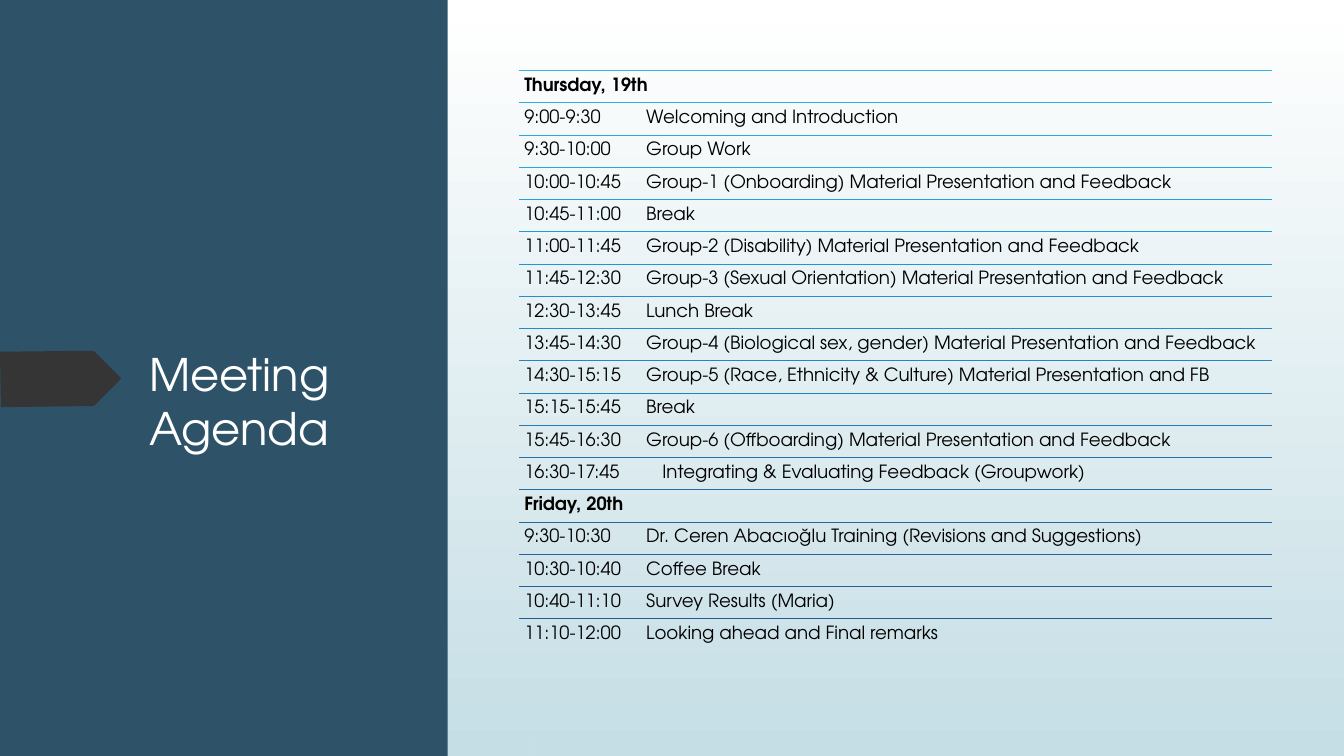
import dataclasses

import pptx
import pptx.dml.color
import pptx.enum.shapes
import pptx.enum.text
import pptx.oxml.ns
import pptx.util
from lxml import etree
from pptx.util import Inches


@dataclasses.dataclass(frozen=True)
class Theme:
    font: str = "TeX Gyre Adventor"
    title_size: int = 32
    agenda_size: int = 13
    panel: str = "2E5369"
    arrow: str = "353535"
    title: str = "FFFFFF"
    text: str = "000000"
    gradient: tuple = ("FFFFFF", "C5DEE5")
    # Rule colours at given row numbers, blended in between
    rules: tuple = ((0, "31B4E6"), (4, "239FDE"), (17, "265991"))


THEME = Theme()
rgb = pptx.dml.color.RGBColor.from_string


def fill_gradient(fill):
    fill.gradient()
    fill.gradient_angle = 270
    for stop, color in zip(fill.gradient_stops, THEME.gradient):
        stop.color.rgb = rgb(color)


def format_paragraph(paragraph, size, color, bold=False):
    for run in paragraph.runs:
        run.font.name = THEME.font
        run.font.size = pptx.util.Pt(size)
        run.font.color.rgb = rgb(color)
        run.font.bold = bold


presentation = pptx.Presentation()
presentation.slide_width = Inches(13.33)
presentation.slide_height = Inches(7.5)
slide = presentation.slides.add_slide(presentation.slide_layouts[5])
fill_gradient(slide.background.fill)

# Side panel and gradient field, placed behind the title
title = slide.shapes.title
rectangle = pptx.enum.shapes.MSO_SHAPE.RECTANGLE
panel = slide.shapes.add_shape(rectangle, 0, 0, Inches(4.44), Inches(7.5))
panel.fill.solid()
panel.fill.fore_color.rgb = rgb(THEME.panel)
field = slide.shapes.add_shape(rectangle, Inches(5.24), 0, Inches(8.09), Inches(7.5))
fill_gradient(field.fill)

# Arrow marker beside the title
builder = slide.shapes.build_freeform(0, Inches(3.49), scale=1.0)
arrow_points = [(0.92, 3.48), (0.94, 3.49), (1.19, 3.74), (1.2, 3.75), (1.19, 3.77),
                (0.94, 4.02), (0.92, 4.03), (0.82, 4.03), (0.01, 4.04)]
builder.add_line_segments([(Inches(x), Inches(y)) for x, y in arrow_points], close=True)
arrow = builder.convert_to_shape()
arrow.fill.solid()
arrow.fill.fore_color.rgb = rgb(THEME.arrow)

for shape in (panel, field, arrow):
    shape.line.fill.background()
    shape.shadow.inherit = False
    title.element.addprevious(shape.element)

# Title
title.left, title.top = Inches(1.38), Inches(3.39)
title.width, title.height = Inches(2.68), Inches(3.31)
title.text_frame.text = "Meeting Agenda"
title.text_frame.word_wrap = True
title.text_frame.auto_size = pptx.enum.text.MSO_AUTO_SIZE.NONE
title.text_frame.vertical_anchor = pptx.enum.text.MSO_ANCHOR.TOP
title_paragraph = title.text_frame.paragraphs[0]
title_paragraph.alignment = pptx.enum.text.PP_ALIGN.LEFT
format_paragraph(title_paragraph, THEME.title_size, THEME.title)

# Agenda: a row without a time is a day heading
agenda = [
    ("", "Thursday, 19th"),
    ("9:00-9:30", "Welcoming and Introduction"),
    ("9:30-10:00", "Group Work"),
    ("10:00-10:45", "Group-1 (Onboarding) Material Presentation and Feedback"),
    ("10:45-11:00", "Break"),
    ("11:00-11:45", "Group-2 (Disability) Material Presentation and Feedback"),
    ("11:45-12:30", "Group-3 (Sexual Orientation) Material Presentation and Feedback"),
    ("12:30-13:45", "Lunch Break"),
    ("13:45-14:30", "Group-4 (Biological sex, gender) Material Presentation and Feedback"),
    ("14:30-15:15", "Group-5 (Race, Ethnicity & Culture) Material Presentation and FB"),
    ("15:15-15:45", "Break"),
    ("15:45-16:30", "Group-6 (Offboarding) Material Presentation and Feedback"),
    ("16:30-17:45", "Integrating & Evaluating Feedback (Groupwork)"),
    ("", "Friday, 20th"),
    ("9:30-10:30", "Dr. Ceren Abacıoğlu Training (Revisions and Suggestions)"),
    ("10:30-10:40", "Coffee Break"),
    ("10:40-11:10", "Survey Results (Maria)"),
    ("11:10-12:00", "Looking ahead and Final remarks"),
]
agenda_left, agenda_top, agenda_width, row_height = 5.15, 0.7, 7.47, 0.32
topic_tab, indented_tab = 1.21, 1.37

# Rule colour of every row
rule_colors = []
for (first, start), (last, end) in zip(THEME.rules, THEME.rules[1:]):
    for row in range(first, last):
        share = (row - first) / (last - first)
        channels = [round(a + (b - a) * share) for a, b in zip(rgb(start), rgb(end))]
        rule_colors.append(pptx.dml.color.RGBColor(*channels))
rule_colors.append(rgb(THEME.rules[-1][1]))

for row, (time, topic) in enumerate(agenda):
    top = Inches(agenda_top + row * row_height)

    # Rule above the row
    rule = slide.shapes.add_connector(
        pptx.enum.shapes.MSO_CONNECTOR.STRAIGHT,
        Inches(agenda_left), top, Inches(agenda_left + agenda_width), top)
    rule.line.color.rgb = rule_colors[row]
    rule.line.width = pptx.util.Pt(0.75)
    etree.SubElement(rule.element.spPr, pptx.oxml.ns.qn("a:effectLst"))

    # Time and topic
    box = slide.shapes.add_textbox(
        Inches(agenda_left), top, Inches(agenda_width), Inches(row_height))
    frame = box.text_frame
    frame.word_wrap = True
    frame.margin_left = frame.margin_right = Inches(0.05)
    frame.margin_top = frame.margin_bottom = Inches(0.05)
    paragraph = frame.paragraphs[0]
    paragraph.text = f"{time}\t{topic}" if time else topic
    paragraph.line_spacing = 0.9
    format_paragraph(paragraph, THEME.agenda_size, THEME.text, bold=not time)
    if time:
        tab = indented_tab if topic.startswith("Integrating") else topic_tab
        tabs = etree.SubElement(paragraph._p.get_or_add_pPr(), pptx.oxml.ns.qn("a:tabLst"))
        etree.SubElement(tabs, pptx.oxml.ns.qn("a:tab"), pos=str(Inches(tab)), algn="l")

presentation.save("out.pptx")
